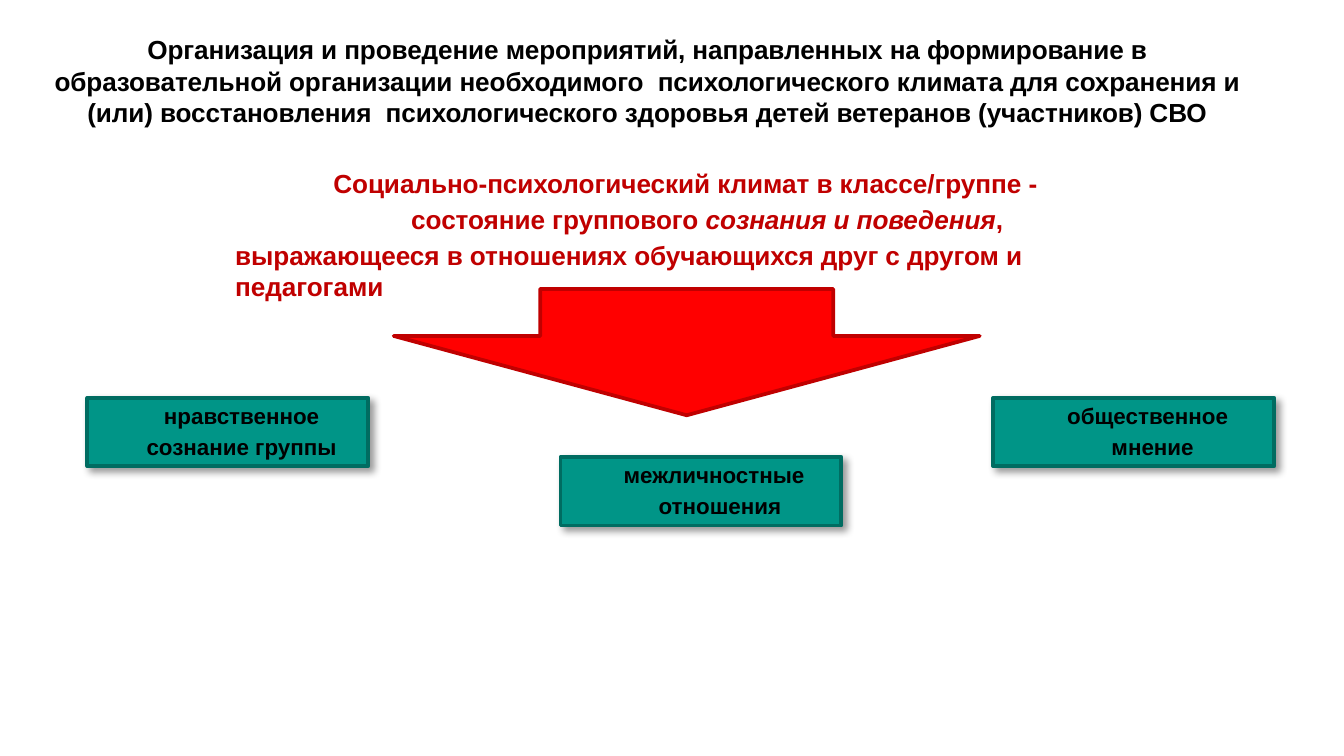
from lxml.etree import SubElement
from pptx import Presentation
from pptx.dml.color import RGBColor
from pptx.enum.shapes import MSO_SHAPE as Shape
from pptx.enum.text import MSO_ANCHOR as Anchor, PP_ALIGN as Align
from pptx.oxml.ns import qn
from pptx.util import Inches, Pt

COLORS = {
    "black": "000000",
    "crimson": "C00000",
    "red": "FF0000",
    "teal": "009587",
    "dark_teal": "006C61",
}

HEADING = (
    "Организация и проведение мероприятий, направленных на формирование в "
    "образовательной организации необходимого  психологического климата для "
    "сохранения и (или) восстановления  психологического здоровья детей "
    "ветеранов (участников) СВО"
)

# Each paragraph: (text, italic) runs, left margin, first-line indent,
# line spacing, space before in points
DEFINITION = [
    ([("Социально-психологический климат в классе/группе - состояние группового ", False),
      ("сознания и поведения", True), (",", False)], 2.73, -0.58, 1.15, 0),
    ([("выражающееся в отношениях обучающихся друг с другом и педагогами", False)],
     1.42, 0, 1, 2.5),
]

# Text, left, top, left margin, first-line indent
COMPONENTS = [
    ("нравственное сознание группы", 0.65, 2.96, 0.44, 0.13),
    ("межличностные отношения", 4.17, 3.4, 0.73, -0.26),
    ("общественное мнение", 7.39, 2.96, 0.88, -0.33),
]
COMPONENT_SIZE = (2.09, 0.51)

ARROW = [(2.93, 2.5), (4.02, 2.5), (4.02, 2.15), (6.2, 2.15),
         (6.2, 2.5), (7.29, 2.5), (5.11, 3.09)]


def color(name):
    return RGBColor.from_string(COLORS[name])


def prepare_frame(shape, top=0.01, right=0):
    frame = shape.text_frame
    frame.word_wrap = True
    frame.vertical_anchor = Anchor.TOP
    frame.margin_left = frame.margin_bottom = 0
    frame.margin_top, frame.margin_right = Inches(top), Inches(right)
    return frame


def format_run(run, size, color_name, italic=False, tracking=0):
    """Style a run; tracking is the letter spacing in hundredths of a point."""
    font = run.font
    font.name, font.size, font.bold, font.italic = "Arial", Pt(size), True, italic
    font.color.rgb = color(color_name)
    run._r.get_or_add_rPr().set("spc", str(tracking))


def indent(paragraph, margin, first_line):
    properties = paragraph._p.get_or_add_pPr()
    properties.set("marL", str(Inches(margin)))
    properties.set("indent", str(Inches(first_line)))


def paint(shape, fill, line):
    shape.shadow.inherit = False
    shape.fill.solid()
    shape.fill.fore_color.rgb = color(fill)
    shape.line.color.rgb = color(line)
    shape.line.width = Pt(2)


def add_drop_shadow(shape):
    effects = shape._element.spPr.find(qn("a:effectLst"))
    shadow = SubElement(effects, qn("a:outerShdw"), blurRad=str(Pt(4)),
                        dist=str(Pt(3)), dir="2700000", algn="tl", rotWithShape="0")
    shade = SubElement(shadow, qn("a:srgbClr"), val=COLORS["black"])
    SubElement(shade, qn("a:alpha"), val="40000")


def add_heading(slide):
    box = slide.shapes.add_textbox(Inches(0.38), Inches(0.24), Inches(8.87), Inches(0.72))
    paragraph = prepare_frame(box).paragraphs[0]
    paragraph.text = HEADING
    paragraph.alignment = Align.CENTER
    format_run(paragraph.runs[0], 14, "black", tracking=-8)


def add_definition(slide):
    box = slide.shapes.add_textbox(Inches(0.33), Inches(0.81), Inches(8.92), Inches(1.26))
    frame = prepare_frame(box, top=0.4, right=0.95)
    for index, (runs, margin, first_line, spacing, before) in enumerate(DEFINITION):
        paragraph = frame.add_paragraph() if index else frame.paragraphs[0]
        indent(paragraph, margin, first_line)
        paragraph.line_spacing = spacing
        paragraph.space_before = Pt(before)
        for text, italic in runs:
            run = paragraph.add_run()
            run.text = text
            format_run(run, 14, "crimson", italic, tracking=-5)


def add_arrow(slide):
    points = [(Inches(x), Inches(y)) for x, y in ARROW]
    builder = slide.shapes.build_freeform(*points[0])
    builder.add_line_segments(points[1:], close=True)
    paint(builder.convert_to_shape(), "red", "crimson")


def add_component(slide, text, left, top, margin, first_line):
    width, height = COMPONENT_SIZE
    shape = slide.shapes.add_shape(
        Shape.RECTANGLE, Inches(left), Inches(top), Inches(width), Inches(height))
    paint(shape, "teal", "dark_teal")
    add_drop_shadow(shape)
    paragraph = prepare_frame(shape, top=0).paragraphs[0]
    paragraph.text = text
    paragraph.alignment = Align.LEFT
    paragraph.line_spacing = 1.15
    indent(paragraph, margin, first_line)
    format_run(paragraph.runs[0], 12, "black")


def main():
    presentation = Presentation()
    presentation.slide_width = Inches(10)
    presentation.slide_height = Inches(10) * 9 // 16
    slide = presentation.slides.add_slide(presentation.slide_layouts[6])
    add_heading(slide)
    add_definition(slide)
    add_arrow(slide)
    for component in COMPONENTS:
        add_component(slide, *component)
    presentation.save("out.pptx")


if __name__ == "__main__":
    main()
